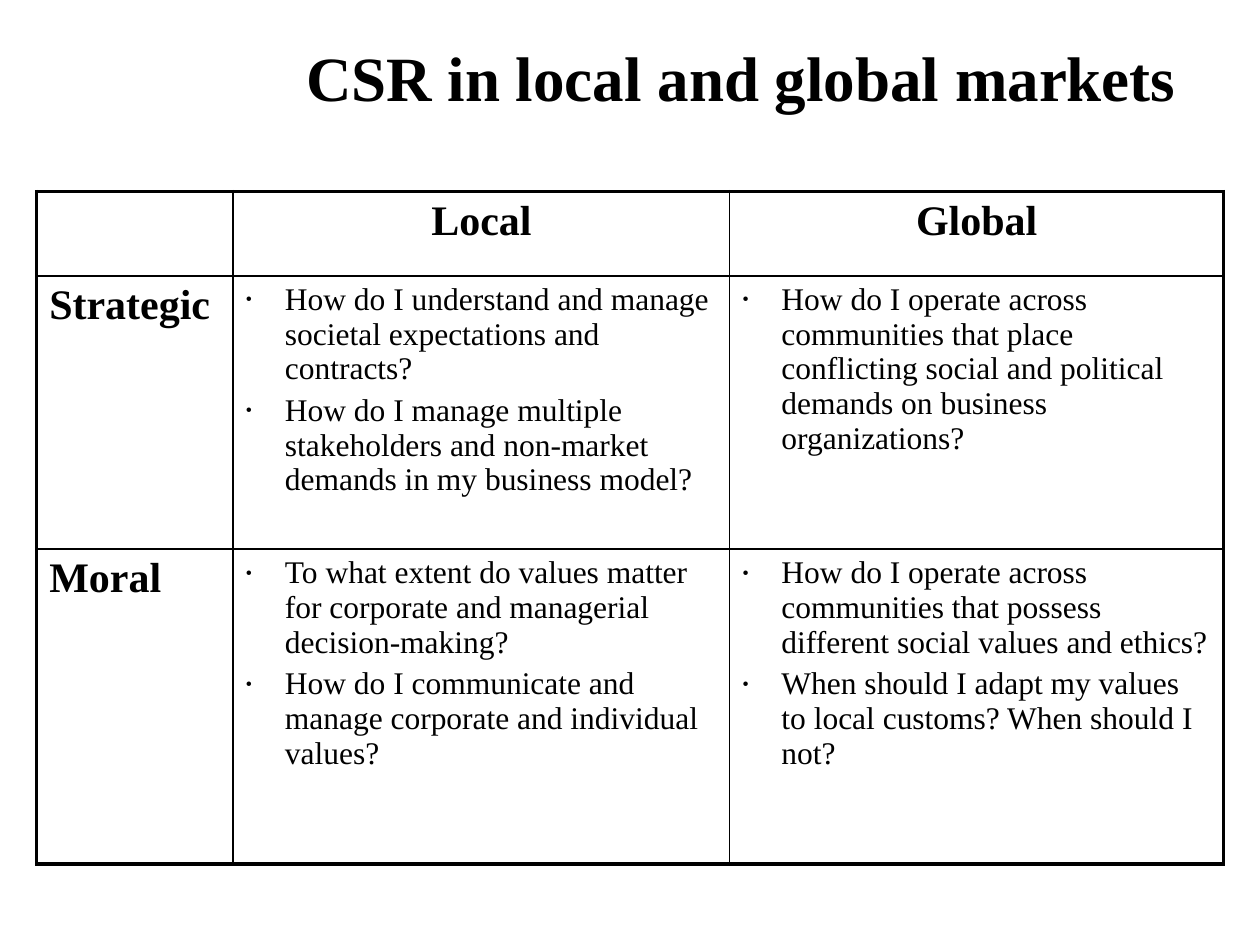
"""Build the slide on CSR in local and global markets with its question table."""
import pptx
import pptx.util
import pptx.dml.color
import pptx.enum.text
import pptx.oxml
import pptx.oxml.ns
from lxml import etree

Cm = pptx.util.Cm
Pt = pptx.util.Pt
PP_ALIGN = pptx.enum.text.PP_ALIGN
BLACK = pptx.dml.color.RGBColor(0x00, 0x00, 0x00)
WHITE = pptx.dml.color.RGBColor(0xFF, 0xFF, 0xFF)
FONT = "Times New Roman"
THIN, THICK = Pt(1), Pt(2.25)
COLUMNS = [3.96, 10.01, 9.96]
ROWS = [1.70, 5.51, 6.35]
CELLS = [
    [[], ["Local"], ["Global"]],
    [
        ["Strategic"],
        ["How do I understand and manage societal expectations and contracts?",
         "How do I manage multiple stakeholders and non-market demands in my business model?"],
        ["How do I operate across communities that place conflicting social and political "
         "demands on business organizations?"],
    ],
    [
        ["Moral"],
        ["To what extent do values matter for corporate and managerial decision-making?",
         "How do I communicate and manage corporate and individual values?"],
        ["How do I operate across communities that possess different social values and ethics?",
         "When should I adapt my values to local customs? When should I not?"],
    ],
]


def write(p, text, size, bold):
    p.text = text
    font = p.runs[0].font
    font.name, font.size, font.bold = FONT, Pt(size), bold
    font.color.rgb = BLACK


def add_border(cell, side, width):
    tc_pr = cell._tc.get_or_add_tcPr()
    ln = etree.SubElement(tc_pr, pptx.oxml.ns.qn("a:ln" + side), w=str(int(width)))
    fill = etree.SubElement(ln, pptx.oxml.ns.qn("a:solidFill"))
    etree.SubElement(fill, pptx.oxml.ns.qn("a:srgbClr"), val=str(BLACK))


prs = pptx.Presentation()
prs.slide_width, prs.slide_height = Cm(25.4), Cm(19.05)
s = prs.slides.add_slide(prs.slide_layouts[6])

title = s.shapes.add_textbox(Cm(5.92), Cm(0.64), Cm(18.19), Cm(1.98))
tf = title.text_frame
tf.word_wrap = True
tf.vertical_anchor = pptx.enum.text.MSO_ANCHOR.MIDDLE
write(tf.paragraphs[0], "CSR in local and global markets", 36, True)
tf.paragraphs[0].line_spacing = 0.9

table = s.shapes.add_table(
    len(ROWS), len(COLUMNS), Cm(0.74), Cm(3.86), Cm(sum(COLUMNS)), Cm(sum(ROWS))
).table
table.first_row = table.horz_banding = False
for column, width in zip(table.columns, COLUMNS):
    column.width = Cm(width)
for row, height in zip(table.rows, ROWS):
    row.height = Cm(height)

for i, row in enumerate(CELLS):
    for j, texts in enumerate(row):
        cell = table.cell(i, j)
        add_border(cell, "L", THICK if j == 0 else THIN)
        add_border(cell, "R", THICK if j == len(COLUMNS) - 1 else THIN)
        add_border(cell, "T", THICK if i == 0 else THIN)
        add_border(cell, "B", THICK if i == len(ROWS) - 1 else THIN)
        cell.fill.solid()
        cell.fill.fore_color.rgb = WHITE
        heading = i == 0 or j == 0
        tf = cell.text_frame
        for n, text in enumerate(texts):
            p = tf.add_paragraph() if n else tf.paragraphs[0]
            if not heading:
                p_pr = p._p.get_or_add_pPr()
                p_pr.set("marL", str(Cm(0.79)))
                p_pr.set("indent", str(-Cm(0.79)))
                etree.SubElement(p_pr, pptx.oxml.ns.qn("a:buSzPct"), val="60000")
                etree.SubElement(p_pr, pptx.oxml.ns.qn("a:buFont"), typeface=FONT)
                etree.SubElement(p_pr, pptx.oxml.ns.qn("a:buChar"), char="•")
            write(p, text, 24 if heading else 18, heading)
            if i == 0:
                p.alignment = PP_ALIGN.CENTER
            if n:
                p.space_before = Pt(3.6)

prs.save("out.pptx")
